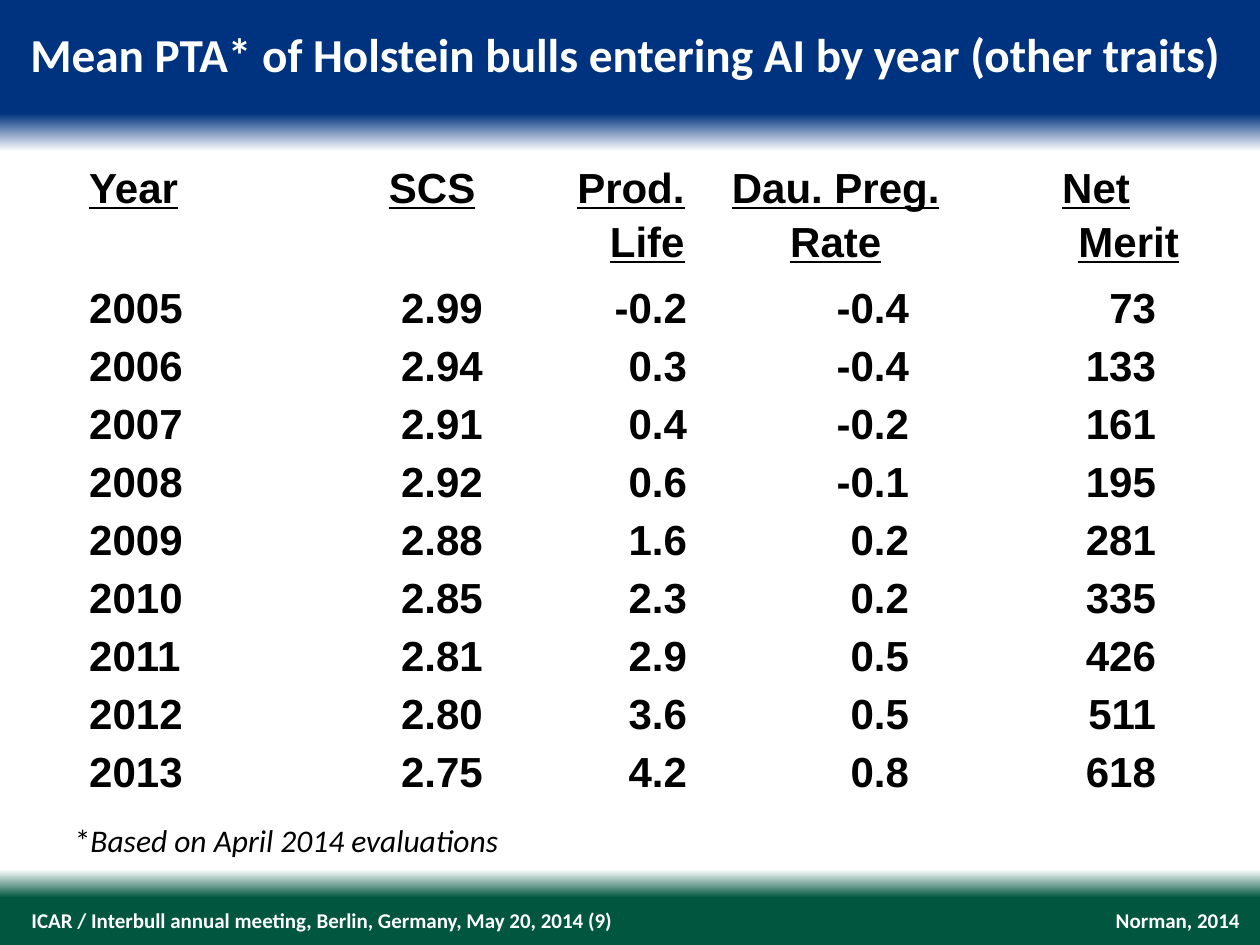
from lxml import etree
from pptx import Presentation
from pptx.dml.color import RGBColor
from pptx.enum.text import MSO_ANCHOR, PP_ALIGN
from pptx.oxml.ns import qn
from pptx.util import Pt

LEFT, CENTER, RIGHT = PP_ALIGN.LEFT, PP_ALIGN.CENTER, PP_ALIGN.RIGHT
TOP, MIDDLE, BOTTOM = MSO_ANCHOR.TOP, MSO_ANCHOR.MIDDLE, MSO_ANCHOR.BOTTOM

COLORS = {"blue": "00337F", "white": "FFFFFF", "green": "00563F", "black": "000000"}
BACKGROUND_STOPS = [(0, "blue"), (12, "blue"), (16, "white"),
                    (92, "white"), (95, "green"), (100, "green")]

HEADINGS = ["Year", "SCS", "Prod.\nLife", "Dau. Preg. Rate", "Net\nMerit"]
HEADING_ALIGNS = [LEFT, RIGHT, RIGHT, CENTER, RIGHT]
HEADING_RIGHT_INSETS = [5, 5, 19.4, 5, 5]
NET_INDENT = 57.4
MEANS_BY_YEAR = [
    ("2005", "2.99", "-0.2", "-0.4", "73"),
    ("2006", "2.94", "0.3", "-0.4", "133"),
    ("2007", "2.91", "0.4", "-0.2", "161"),
    ("2008", "2.92", "0.6", "-0.1", "195"),
    ("2009", "2.88", "1.6", "0.2", "281"),
    ("2010", "2.85", "2.3", "0.2", "335"),
    ("2011", "2.81", "2.9", "0.5", "426"),
    ("2012", "2.80", "3.6", "0.5", "511"),
    ("2013", "2.75", "4.2", "0.8", "618"),
]
COLUMN_WIDTHS = [95.6, 135, 134, 134, 134]
VALUE_RIGHT_INSETS = [5, 0.7, 18, 25.2, 18]
ROW_HEIGHT = 33.1


def style_font(font, size, name, color, bold=False):
    font.size = Pt(size)
    font.name = name
    font.bold = bold
    font.color.rgb = RGBColor.from_string(COLORS[color])


def paint_background(slide):
    fill = slide.background.fill
    fill.gradient()
    fill.gradient_angle = 270
    stops = slide.background._cSld.find(".//" + qn("a:gsLst"))
    for stop in list(stops):
        stops.remove(stop)
    for percent, color in BACKGROUND_STOPS:
        stop = etree.SubElement(stops, qn("a:gs"), pos=str(percent * 1000))
        etree.SubElement(stop, qn("a:srgbClr"), val=COLORS[color])


def add_line(slide, box, text, size, color="white", bold=True,
             align=LEFT, anchor=MIDDLE, insets=(0, 0), wrap=True):
    frame = slide.shapes.add_textbox(*map(Pt, box)).text_frame
    frame.word_wrap = wrap
    frame.vertical_anchor = anchor
    frame.margin_left = frame.margin_right = Pt(insets[0])
    frame.margin_top = frame.margin_bottom = Pt(insets[1])
    paragraph = frame.paragraphs[0]
    paragraph.text = text
    paragraph.alignment = align
    style_font(paragraph.runs[0].font, size, "Calibri", color, bold)
    return paragraph


def fill_cell(cell, text, align, anchor, insets, spacing=1.0, underline=False):
    cell.fill.background()
    cell.vertical_anchor = anchor
    cell.margin_left, cell.margin_right = map(Pt, insets)
    cell.margin_top = cell.margin_bottom = 0
    cell.text_frame.text = text
    for paragraph in cell.text_frame.paragraphs:
        paragraph.alignment = align
        paragraph.line_spacing = spacing
        for run in paragraph.runs:
            style_font(run.font, 24, "Arial", "black", True)
            run.font.underline = underline


def add_means_table(slide):
    row_count = len(MEANS_BY_YEAR) + 1
    table = slide.shapes.add_table(
        row_count, len(HEADINGS), Pt(46), Pt(90.7),
        Pt(sum(COLUMN_WIDTHS)), Pt(ROW_HEIGHT * (row_count + 1))).table
    table.first_row = table.horz_banding = False
    for column, width in zip(table.columns, COLUMN_WIDTHS):
        column.width = Pt(width)
    for row in table.rows:
        row.height = Pt(ROW_HEIGHT)
    table.rows[0].height = Pt(2 * ROW_HEIGHT)

    for col, heading in enumerate(HEADINGS):
        fill_cell(table.cell(0, col), heading, HEADING_ALIGNS[col], TOP,
                  (5, HEADING_RIGHT_INSETS[col]), 1.15, True)
    net = table.cell(0, len(HEADINGS) - 1).text_frame.paragraphs[0]
    net.alignment = LEFT
    net._p.get_or_add_pPr().set("marL", str(Pt(NET_INDENT)))

    for row, means in enumerate(MEANS_BY_YEAR, 1):
        for col, value in enumerate(means):
            is_year = col == 0
            fill_cell(table.cell(row, col), value, LEFT if is_year else RIGHT, BOTTOM,
                      (5 if is_year else 0.7, VALUE_RIGHT_INSETS[col]),
                      1.15 if is_year else 1.0)


def add_footnote(slide):
    footnote = add_line(slide, (35.7, 465.8, 288, 51), "*", 18, "black", False,
                        anchor=TOP, insets=(7.2, 3.6))
    basis = footnote.add_run()
    basis.text = "Based on April 2014 evaluations"
    style_font(basis.font, 18, "Calibri", "black")
    basis.font.italic = True


def main():
    presentation = Presentation()
    presentation.slide_width, presentation.slide_height = Pt(720), Pt(540)
    slide = presentation.slides.add_slide(presentation.slide_layouts[6])
    paint_background(slide)
    add_line(slide, (636.5, 518.4, 72, 14.4), "Norman, 2014", 12, align=RIGHT, wrap=False)
    add_line(slide, (18, 518.4, 376, 14.4),
             "ICAR / Interbull annual meeting, Berlin, Germany, May 20, 2014 (9)", 12)
    add_line(slide, (17.3, 14.4, 692.6, 32.4),
             "Mean PTA* of Holstein bulls entering AI by year (other traits)", 27, anchor=TOP)
    add_means_table(slide)
    add_footnote(slide)
    presentation.save("out.pptx")


if __name__ == "__main__":
    main()
